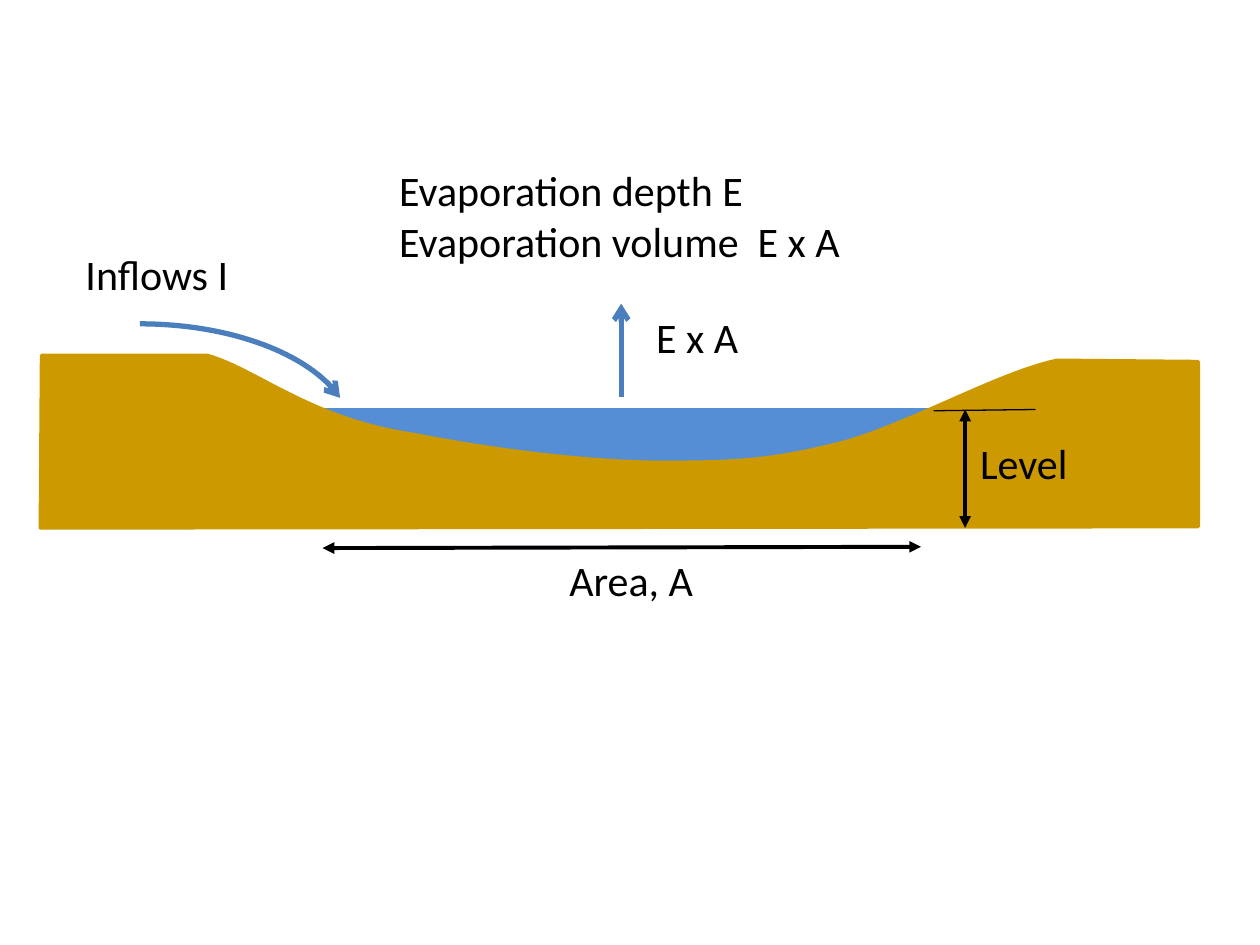
from pptx import Presentation
from pptx.dml.color import RGBColor
from pptx.enum.shapes import MSO_CONNECTOR as Connector, MSO_SHAPE as Shape
from pptx.enum.text import MSO_AUTO_SIZE as AutoSize
from pptx.oxml.ns import qn
from pptx.util import Inches, Pt
from lxml.etree import SubElement

COLORS = {"water": "558ED5", "ground": "CC9900", "flow": "4B7EBC", "ink": "000000"}


def style_line(part, color, width, head=None, tail=None):
    part.line.color.rgb = RGBColor.from_string(COLORS[color])
    part.line.width = Pt(width)
    outline = part.element.spPr.find(qn("a:ln"))
    for tag, arrow in (("a:headEnd", head), ("a:tailEnd", tail)):
        if arrow:
            SubElement(outline, qn(tag), type=arrow)


def curve_points(start, control1, control2, end, steps=24):
    for step in range(1, steps + 1):
        t = step / steps
        weights = ((1 - t) ** 3, 3 * t * (1 - t) ** 2, 3 * t**2 * (1 - t), t**3)
        yield tuple(
            sum(w * value for w, value in zip(weights, axis))
            for axis in zip(start, control1, control2, end)
        )


prs = Presentation()
prs.slide_width, prs.slide_height = Inches(10), Inches(7.5)
slide = prs.slides.add_slide(prs.slide_layouts[6])
shapes = slide.shapes

water = shapes.add_shape(
    Shape.RECTANGLE, Inches(1.33), Inches(3.25), Inches(7.42), Inches(0.63)
)

lake_bed = [
    ((2.04, 2.93), (2.46, 3.33), (3.29, 3.45)),
    ((3.89, 3.57), (4.68, 3.67), (5.25, 3.67)),
    ((5.81, 3.67), (6.09, 3.66), (6.62, 3.53)),
    ((7.14, 3.41), (7.91, 2.96), (8.39, 2.86)),
]
ground_outline = [(0.33, 2.82), (1.64, 2.82)]
for bend in lake_bed:
    ground_outline.extend(curve_points(ground_outline[-1], *bend))
ground_outline += [(9.51, 2.87), (9.51, 4.18), (0.32, 4.19)]

corners = [(Inches(x), Inches(y)) for x, y in ground_outline]
builder = shapes.build_freeform(*corners[0])
builder.add_line_segments(corners[1:], close=True)
ground = builder.convert_to_shape()

for body, color in ((water, "water"), (ground, "ground")):
    body.shadow.inherit = False
    body.fill.solid()
    body.fill.fore_color.rgb = RGBColor.from_string(COLORS[color])
    style_line(body, color, 2)

inflow = shapes.add_shape(
    Shape.ARC, Inches(-0.58), Inches(2.57), Inches(3.38), Inches(1.78)
)
inflow.adjustments[0], inflow.adjustments[1] = 162, 209.53
inflow.shadow.inherit = False
inflow.fill.background()
style_line(inflow, "flow", 3, tail="arrow")

both_ends = {"head": "triangle", "tail": "triangle"}
straight_lines = [
    ((2.56, 4.35, 7.31, 4.34), "ink", 2.25, both_ends),
    ((7.66, 4.19, 7.66, 3.25), "ink", 2.25, both_ends),
    ((7.41, 3.26, 8.22, 3.25), "ink", 0.75, {}),
    ((4.93, 3.15, 4.93, 2.41), "flow", 3, {"tail": "arrow"}),
]
for ends, color, width, arrows in straight_lines:
    measure = shapes.add_connector(Connector.STRAIGHT, *map(Inches, ends))
    style_line(measure, color, width, **arrows)
    SubElement(measure.element.spPr, qn("a:effectLst"))

label_font = {"name": "Calibri", "size": Pt(24)}
labels = [
    ((4.42, 4.35, 1.8, 0.5), True, ["Area, A"]),
    ((7.68, 3.42, 1.66, 0.5), True, ["Level"]),
    ((0.58, 1.92, 1.92, 0.75), False, ["Inflows I"]),
    ((5.11, 2.42, 1.23, 0.75), False, ["E x A"]),
    ((3.07, 1.26, 4.75, 0.91), True,
     ["Evaporation depth E", "Evaporation volume  E x A"]),
]
for place, wraps, lines in labels:
    frame = shapes.add_textbox(*map(Inches, place)).text_frame
    frame.word_wrap = wraps
    frame.auto_size = AutoSize.SHAPE_TO_FIT_TEXT
    frame.text = "\n".join(lines)
    for paragraph in frame.paragraphs:
        font = paragraph.runs[0].font
        for attribute, value in label_font.items():
            setattr(font, attribute, value)
        font.color.rgb = RGBColor.from_string(COLORS["ink"])

prs.save("out.pptx")
